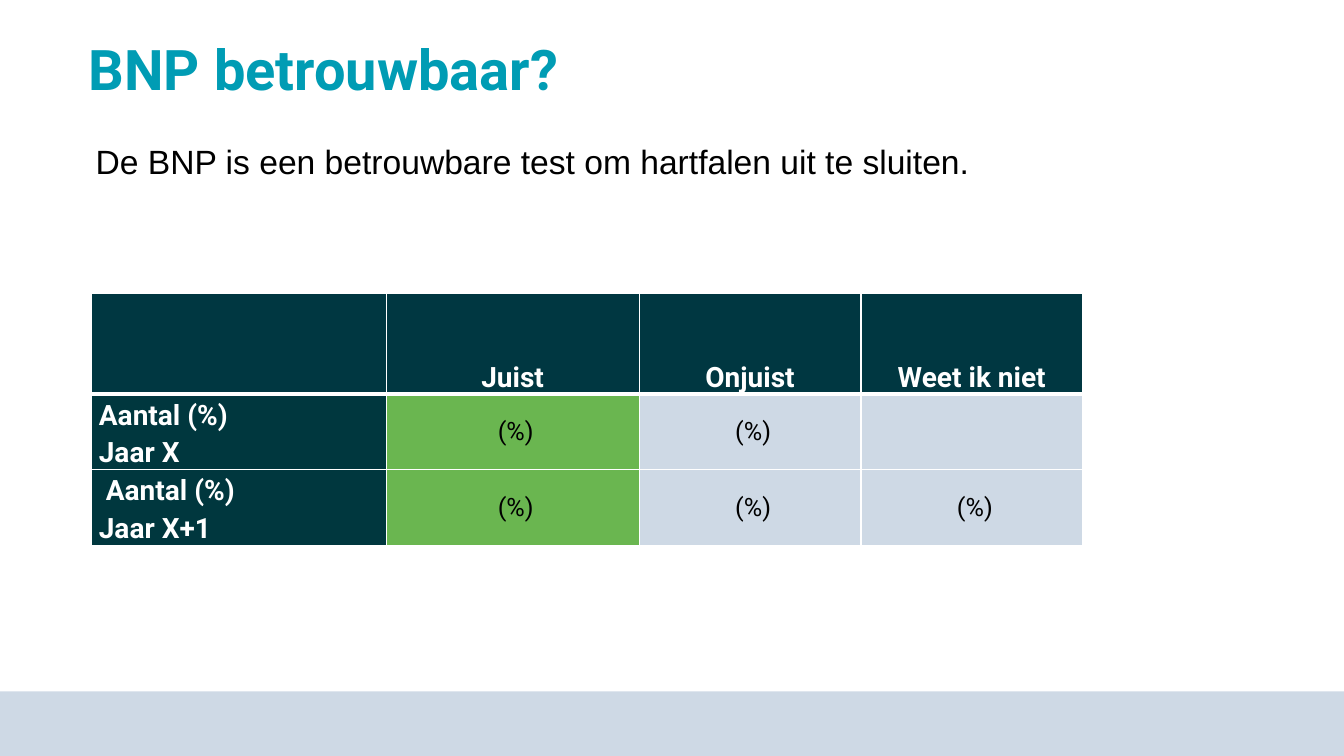
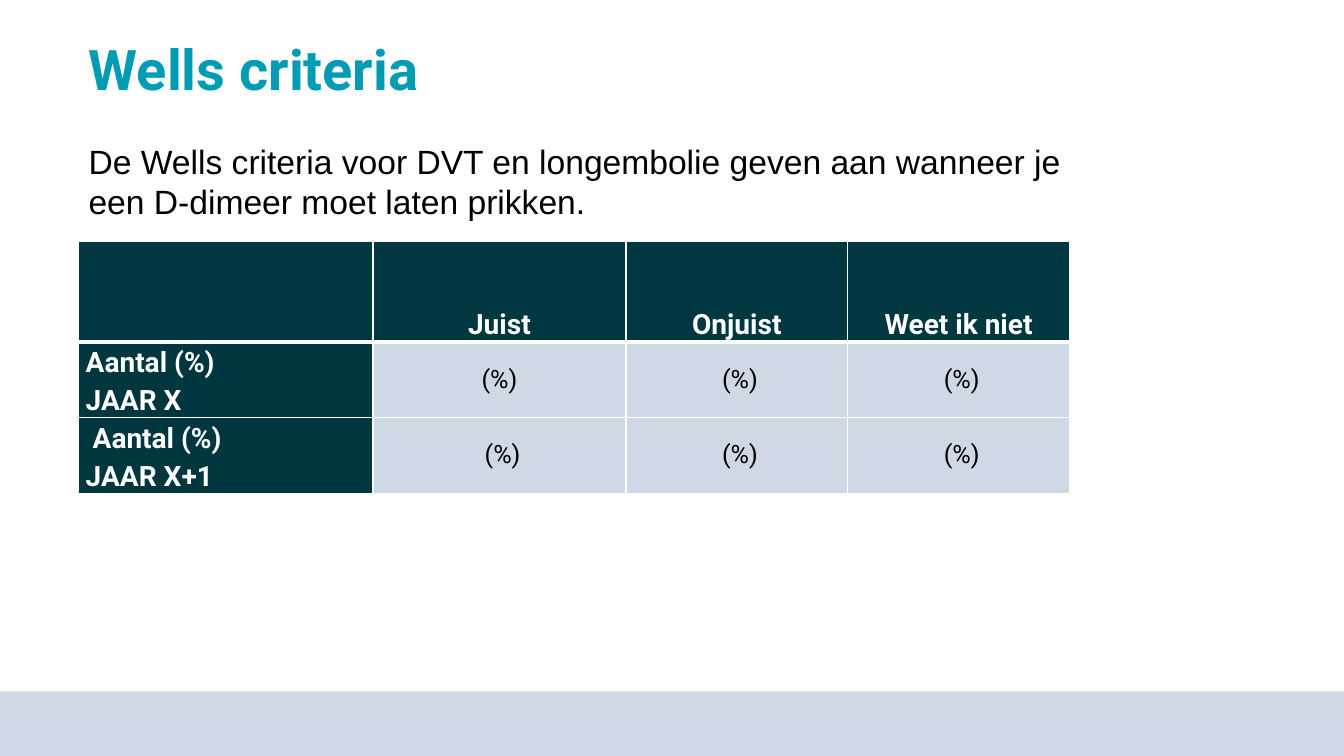
from lxml import etree
from pptx import Presentation
from pptx.dml.color import RGBColor
from pptx.enum.shapes import MSO_SHAPE
from pptx.enum.text import MSO_ANCHOR, MSO_AUTO_SIZE, PP_ALIGN
from pptx.oxml.ns import qn
from pptx.util import Inches, Pt

RECT = MSO_SHAPE.RECTANGLE
TOP, MIDDLE, BOTTOM = MSO_ANCHOR.TOP, MSO_ANCHOR.MIDDLE, MSO_ANCHOR.BOTTOM
LEFT, CENTER = PP_ALIGN.LEFT, PP_ALIGN.CENTER
NO_FIT = MSO_AUTO_SIZE.NONE

WIDTH, HEIGHT = Inches(13.33), Inches(7.5)
TITLE_ONLY = 5
MARGIN = 5.85
COLUMNS = [21.9, 18.83, 16.5, 16.5]
ROWS = [13.33, 10, 10]
HEADINGS = ["", "Juist", "Onjuist", "Weet ik niet"]

COLORS = {
    "title": "009CB4",
    "band": "CED9E5",
    "header": "003741",
    "label": "00373E",
    "correct": "6AB650",
    "white": "FFFFFF",
    "black": "000000",
}


def across(percent):
    return round(WIDTH * percent / 100)


def down(percent):
    return round(HEIGHT * percent / 100)


def rgb(name):
    return RGBColor.from_string(COLORS[name])


def write(tf, lines, size, color, font="Roboto", bold=False, align=LEFT, spacing=1.0):
    for i, line in enumerate(lines):
        p = tf.add_paragraph() if i else tf.paragraphs[0]
        p.alignment = align
        p.line_spacing = spacing
        r = p.add_run()
        r.text = line
        r.font.name = font
        r.font.size = Pt(size)
        r.font.bold = bold
        r.font.color.rgb = rgb(color)


def set_up_layout(prs, layout):
    title = layout.placeholders[0]
    title.left, title.top = across(MARGIN), down(4.8)
    title.width, title.height = across(80.1), down(9.5)

    slide = prs.slides.add_slide(layout)
    band = slide.shapes.add_shape(RECT, 0, down(91.45), WIDTH, down(8.55))
    band.shadow.inherit = False
    band.fill.solid()
    band.fill.fore_color.rgb = rgb("band")
    band.line.fill.background()
    layout.shapes.element.insert(2, band.element)
    return slide


def add_title(slide, text):
    tf = slide.shapes.title.text_frame
    tf.auto_size = NO_FIT
    tf.vertical_anchor = MIDDLE
    write(tf, [text], 40, "title", bold=True, spacing=0.9)


def add_statement(slide, left, lines):
    height = 1.3 + 5.1 * len(lines)
    box = slide.shapes.add_textbox(across(left), down(18), across(86.95), down(height))
    tf = box.text_frame
    tf.word_wrap = True
    tf.vertical_anchor = TOP
    write(tf, lines, 24, "black", font="Arial")


def add_borders(cell, top, bottom):
    tc_pr = cell._tc.get_or_add_tcPr()
    for side, width in (("L", 1), ("R", 1), ("T", top), ("B", bottom)):
        ln = etree.SubElement(tc_pr, qn(f"a:ln{side}"), w=str(Pt(width)))
        fill = etree.SubElement(ln, qn("a:solidFill"))
        etree.SubElement(fill, qn("a:srgbClr"), val=COLORS["white"])


def fill_cell(cell, row, col, lines, correct):
    add_borders(cell, 3 if row == 1 else 1, 3 if row == 0 else 1)
    cell.margin_left = cell.margin_right = Inches(0.07)
    cell.margin_top = cell.margin_bottom = 0
    if row == 0:
        fill, anchor = "header", BOTTOM
    elif col == 0:
        fill, anchor = "label", TOP
    else:
        fill, anchor = "correct" if col == correct else "band", MIDDLE
    cell.fill.solid()
    cell.fill.fore_color.rgb = rgb(fill)
    cell.vertical_anchor = anchor
    if not any(lines):
        return
    if row == 0 or col == 0:
        write(cell.text_frame, lines, 20, "white", bold=True,
              align=LEFT if col == 0 else CENTER, spacing=1.15)
    else:
        write(cell.text_frame, lines, 18, "black", align=CENTER)


def add_answers(slide, left, top, rows, correct=None):
    frame = slide.shapes.add_table(len(ROWS), len(COLUMNS), across(left), down(top),
                                   across(sum(COLUMNS)), down(sum(ROWS)))
    table = frame.table
    for column, width in zip(table.columns, COLUMNS):
        column.width = across(width)
    for row, height in zip(table.rows, ROWS):
        row.height = down(height)
    for i, row in enumerate([HEADINGS] + rows):
        for j, text in enumerate(row):
            fill_cell(table.cell(i, j), i, j, text.split("\n"), correct)


def main():
    prs = Presentation()
    prs.slide_width, prs.slide_height = WIDTH, HEIGHT
    layout = prs.slide_layouts[TITLE_ONLY]

    slide = set_up_layout(prs, layout)
    add_title(slide, "BNP betrouwbaar?")
    add_answers(slide, 6.83, 38.8, [
        ["Aantal (%)\nJaar X", " (%)", " (%)", ""],
        [" Aantal (%)\nJaar X+1", " (%)", " (%)", " (%)"],
    ], correct=1)
    add_statement(slide, 6.38, ["De BNP is een betrouwbare test om hartfalen uit te sluiten."])

    slide = prs.slides.add_slide(layout)
    add_title(slide, "Wells criteria")
    add_answers(slide, MARGIN, 31.87, [
        ["Aantal (%)\nJAAR X", "(%)", " (%)", " (%)"],
        [" Aantal (%)\nJAAR X+1", " (%)", " (%)", " (%)"],
    ])
    add_statement(slide, MARGIN, [
        "De Wells criteria voor DVT en longembolie geven aan wanneer je",
        "een D-dimeer moet laten prikken.",
    ])

    prs.save("out.pptx")


if __name__ == "__main__":
    main()
